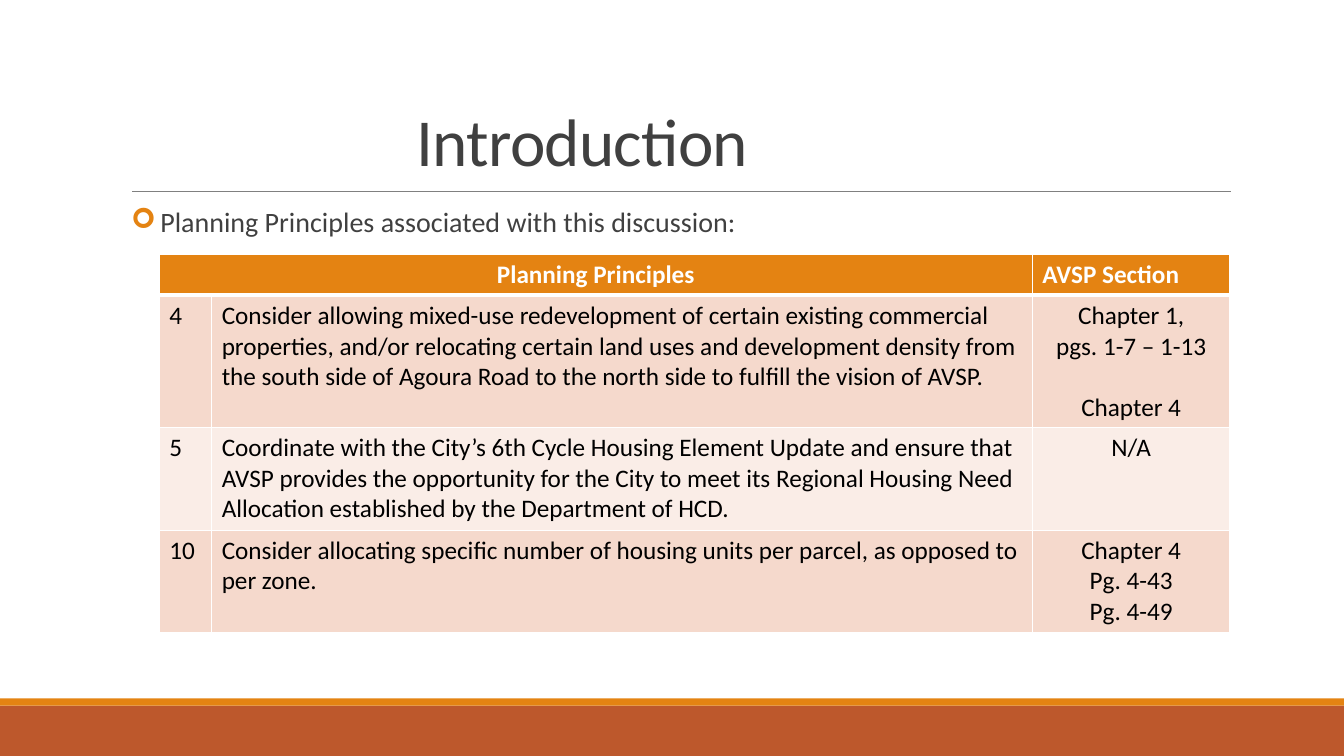
import pptx
import pptx.dml.color
import pptx.enum.shapes
import pptx.enum.text
import pptx.oxml
import pptx.oxml.ns
import pptx.util
from pptx.util import Inches

RGBColor = pptx.dml.color.RGBColor
ORANGE = RGBColor(0xE4, 0x83, 0x12)
RUST = RGBColor(0xBD, 0x58, 0x2C)
GREY = RGBColor(0x80, 0x80, 0x80)
DARK = RGBColor(0x40, 0x40, 0x40)
BLACK = RGBColor(0, 0, 0)
WHITE = RGBColor(0xFF, 0xFF, 0xFF)
BANDS = [RGBColor(0xF5, 0xD9, 0xCC), RGBColor(0xFA, 0xED, 0xE7)]
LEFT = pptx.enum.text.PP_ALIGN.LEFT
CENTER = pptx.enum.text.PP_ALIGN.CENTER

# Each row: number, principle, section paragraphs as (text, points before)
PRINCIPLES = [
    ("4", "Consider allowing mixed-use redevelopment of certain existing commercial "
     "properties, and/or relocating certain land uses and development density from "
     "the south side of Agoura Road to the north side to fulfill the vision of AVSP.",
     [("Chapter 1,", 0), ("pgs. 1-7 – 1-13", 0), ("Chapter 4", 22)]),
    ("5", "Coordinate with the City’s 6th Cycle Housing Element Update and ensure that "
     "AVSP provides the opportunity for the City to meet its Regional Housing Need "
     "Allocation established by the Department of HCD.",
     [("N/A", 0)]),
    ("10", "Consider allocating specific number of housing units per parcel, as opposed "
     "to per zone.",
     [("Chapter 4", 0), ("Pg. 4-43", 0), ("Pg. 4-49", 0)]),
]
COLUMN_WIDTHS = [0.52, 8.14, 1.96]
ROW_HEIGHTS = [0.41, 1.31, 1.02, 1.02]


def set_all(target, values):
    for name, value in values.items():
        setattr(target, name, value)


def add_span(para, text, size, color, bold=False):
    span = para.add_run()
    span.text = text
    set_all(span.font, {"name": "Calibri", "size": pptx.util.Pt(size), "bold": bold})
    span.font.color.rgb = color
    return span


def add_xml(parent, tag, content="", **attributes):
    values = " ".join(f'{name}="{value}"' for name, value in attributes.items())
    namespace = pptx.oxml.ns.nsdecls("a")
    parent.append(pptx.oxml.parse_xml(
        f"<a:{tag} {namespace} {values}>{content}</a:{tag}>"))


def add_band(page, top, height, color):
    band = page.shapes.add_shape(pptx.enum.shapes.MSO_SHAPE.RECTANGLE, Inches(0),
                                 Inches(top), Inches(13.33), Inches(height))
    band.shadow.inherit = False
    band.fill.solid()
    band.fill.fore_color.rgb = color
    band.line.fill.background()


def add_rule(page, left, right, top):
    rule = page.shapes.add_connector(pptx.enum.shapes.MSO_CONNECTOR.STRAIGHT, Inches(left),
                                     Inches(top), Inches(right), Inches(top))
    rule.line.color.rgb = GREY
    rule.line.width = pptx.util.Pt(0.5)
    add_xml(rule._element.spPr, "effectLst")


def fill_title(page, text):
    title = page.shapes.title
    set_all(title, {"left": Inches(4.03), "top": Inches(0.25),
                    "width": Inches(8.17), "height": Inches(1.59)})
    set_all(title.text_frame, {"vertical_anchor": pptx.enum.text.MSO_ANCHOR.BOTTOM,
                               "auto_size": pptx.enum.text.MSO_AUTO_SIZE.NONE,
                               "word_wrap": True})
    para = title.text_frame.paragraphs[0]
    set_all(para, {"alignment": LEFT, "line_spacing": 0.85})
    span = add_span(para, text, 48, DARK)
    span.font._element.set("spc", "-50")


def add_bullet_text(page, text):
    box = page.shapes.add_textbox(Inches(1.3), Inches(2.02), Inches(10.9), Inches(0.45))
    set_all(box.text_frame, {"word_wrap": True, "margin_left": 0, "margin_right": 0})
    para = box.text_frame.paragraphs[0]
    set_all(para, {"line_spacing": 0.9, "space_after": pptx.util.Pt(2)})
    properties = para._p.get_or_add_pPr()
    indent = Inches(0.29)
    properties.set("marL", str(indent))
    properties.set("indent", str(-indent))
    add_xml(properties, "buClr", f'<a:srgbClr val="{ORANGE}"/>')
    add_xml(properties, "buFont", typeface="Wingdings")
    add_xml(properties, "buChar", char="➢")
    add_span(para, text, 20, DARK)


def format_cell(cell, fill, bottom_width=1):
    properties = cell._tc.get_or_add_tcPr()
    line = f'<a:solidFill><a:srgbClr val="{WHITE}"/></a:solidFill>'
    for side, width in {"L": 1, "R": 1, "T": 1, "B": bottom_width}.items():
        add_xml(properties, f"ln{side}", line, w=pptx.util.Pt(width))
    cell.fill.solid()
    cell.fill.fore_color.rgb = fill


def write_cell(cell, lines, color, alignment=LEFT, bold=False):
    for index, (text, before) in enumerate(lines):
        frame = cell.text_frame
        para = frame.add_paragraph() if index else frame.paragraphs[0]
        para.alignment = alignment
        if before:
            para.space_before = pptx.util.Pt(before)
        add_span(para, text, 18, color, bold)


def add_principles_table(page):
    table = page.shapes.add_table(
        len(ROW_HEIGHTS), len(COLUMN_WIDTHS), Inches(1.58), Inches(2.52),
        Inches(sum(COLUMN_WIDTHS)), Inches(sum(ROW_HEIGHTS))).table
    for column, width in zip(table.columns, COLUMN_WIDTHS):
        column.width = Inches(width)
    for row, height in zip(table.rows, ROW_HEIGHTS):
        row.height = Inches(height)

    # Header row
    for cell in table.rows[0].cells:
        format_cell(cell, ORANGE, bottom_width=3)
    table.cell(0, 0).merge(table.cell(0, 1))
    write_cell(table.cell(0, 0), [("Planning Principles", 0)], WHITE, CENTER, True)
    write_cell(table.cell(0, 2), [("AVSP Section", 0)], WHITE, LEFT, True)

    # Principle rows
    for index, (number, principle, sections) in enumerate(PRINCIPLES):
        cells = list(table.rows[index + 1].cells)
        for cell in cells:
            format_cell(cell, BANDS[index % 2])
        write_cell(cells[0], [(number, 0)], BLACK)
        write_cell(cells[1], [(principle, 0)], BLACK)
        write_cell(cells[2], sections, BLACK, CENTER)


def main():
    deck = pptx.Presentation()
    set_all(deck, {"slide_width": Inches(13.33), "slide_height": Inches(7.5)})
    page = deck.slides.add_slide(deck.slide_layouts[5])

    # Footer bands and title rule
    add_band(page, 7, 0.5, RUST)
    add_band(page, 6.93, 0.07, ORANGE)
    add_rule(page, 1.31, 12.21, 1.9)

    # Content
    fill_title(page, "Introduction")
    add_bullet_text(page, "Planning Principles associated with this discussion:")
    add_principles_table(page)
    deck.save("out.pptx")


if __name__ == "__main__":
    main()
